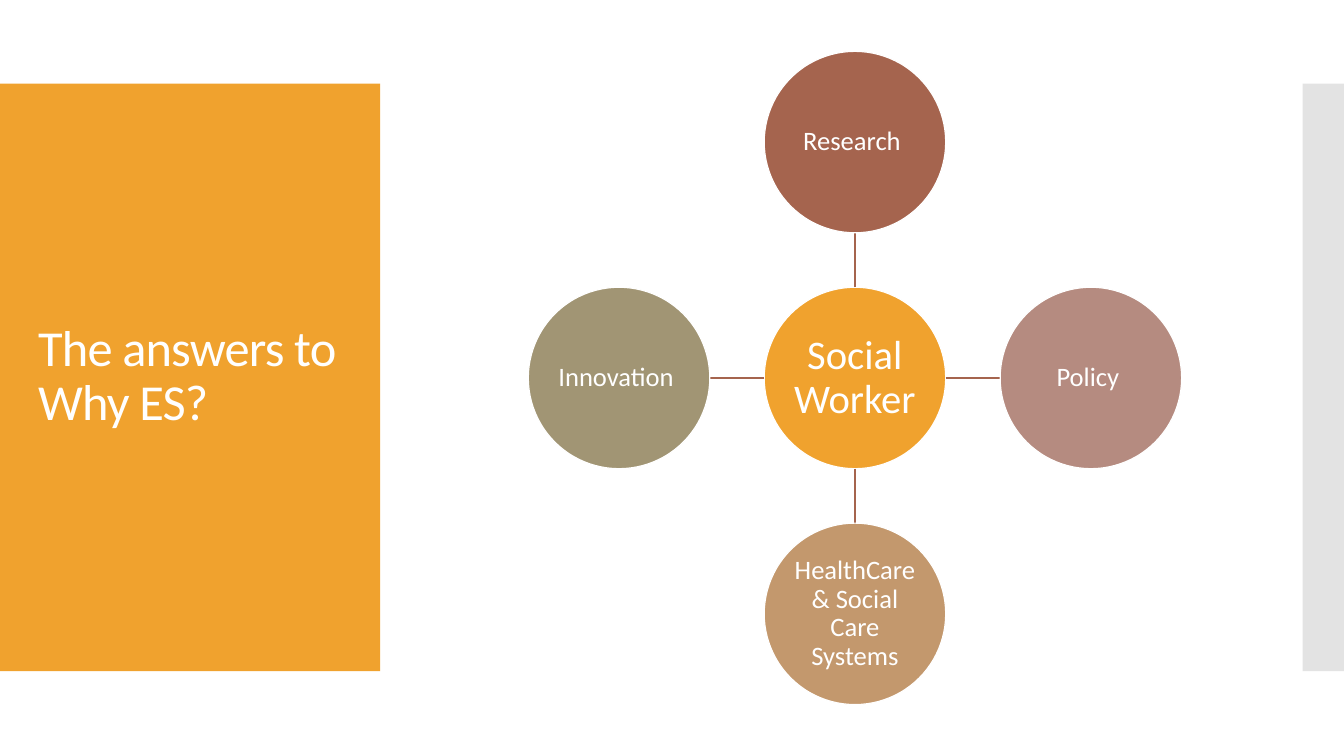
"""Build a slide with a title panel and a hub-and-spoke diagram."""
from dataclasses import dataclass

import pptx
import pptx.dml.color
import pptx.enum.shapes
import pptx.enum.text
import pptx.oxml.ns
import pptx.util
from lxml import etree
from pptx.util import Inches


@dataclass(frozen=True)
class Theme:
    font: str = "Calibri"
    white: str = "FFFFFF"
    accent: str = "F0A22E"
    spoke: str = "A5644E"
    side_bar: str = "C8C8C8"
    title_size: float = 36
    hub_size: float = 29
    node_size: float = 19
    line_width: float = 0.85
    line_spacing: float = 0.9


@dataclass(frozen=True)
class Node:
    text: str
    color: str
    column: int
    row: int


THEME = Theme()
CENTER_X, CENTER_Y = 8.48, 3.75
DIAMETER, STEP = 1.8, 2.34
HUB = Node("Social Worker ", THEME.accent, 0, 0)
NODES = [
    Node("Research ", "A5644E", 0, -1),
    Node("Policy ", "B58B80", 1, 0),
    Node("HealthCare & Social Care Systems", "C3986D", 0, 1),
    Node("Innovation ", "A19574", -1, 0),
]


def rgb(color: str) -> pptx.dml.color.RGBColor:
    return pptx.dml.color.RGBColor.from_string(color)


def write_text(shape, text: str, size: float, inset: float, alignment, spacing: int = 0) -> None:
    frame = shape.text_frame
    frame.text = text
    frame.word_wrap = True
    frame.vertical_anchor = pptx.enum.text.MSO_ANCHOR.MIDDLE
    frame.margin_left = frame.margin_right = Inches(inset)
    frame.margin_top = frame.margin_bottom = Inches(inset)
    paragraph = frame.paragraphs[0]
    paragraph.alignment = alignment
    paragraph.line_spacing = THEME.line_spacing
    run = paragraph.runs[0]
    run.font.name = THEME.font
    run.font.size = pptx.util.Pt(size)
    run.font.color.rgb = rgb(THEME.white)
    if spacing:
        run._r.get_or_add_rPr().set("spc", str(spacing))


def add_filled_shape(slide, kind, left: float, top: float, width: float, height: float, color: str):
    shape = slide.shapes.add_shape(
        kind, Inches(left), Inches(top), Inches(width), Inches(height)
    )
    shape.shadow.inherit = False
    shape.fill.solid()
    shape.fill.fore_color.rgb = rgb(color)
    shape.line.fill.background()
    return shape


def add_panel(slide, left: float, width: float, color: str):
    rectangle = pptx.enum.shapes.MSO_SHAPE.RECTANGLE
    return add_filled_shape(slide, rectangle, left, 0.83, width, 5.83, color)


def set_opacity(shape, percent: int) -> None:
    color = shape._element.spPr.find(".//" + pptx.oxml.ns.qn("a:srgbClr"))
    etree.SubElement(color, pptx.oxml.ns.qn("a:alpha")).set("val", str(percent * 1000))


def add_title(slide, text: str) -> None:
    title = slide.shapes.add_textbox(Inches(0.28), Inches(1.23), Inches(3.22), Inches(5.03))
    write_text(title, text, THEME.title_size, 0.1, pptx.enum.text.PP_ALIGN.LEFT, spacing=-60)


def add_node(slide, node: Node, size: float, inset: float) -> None:
    left = CENTER_X + node.column * STEP - DIAMETER / 2
    top = CENTER_Y + node.row * STEP - DIAMETER / 2
    oval = pptx.enum.shapes.MSO_SHAPE.OVAL
    circle = add_filled_shape(slide, oval, left, top, DIAMETER, DIAMETER, node.color)
    circle.line.color.rgb = rgb(THEME.white)
    circle.line.width = pptx.util.Pt(THEME.line_width)
    write_text(circle, node.text, size, inset, pptx.enum.text.PP_ALIGN.CENTER)


def add_spoke(slide, node: Node) -> None:
    start, end = DIAMETER / 2, STEP - DIAMETER / 2
    connector = slide.shapes.add_connector(
        pptx.enum.shapes.MSO_CONNECTOR.STRAIGHT,
        Inches(CENTER_X + node.column * start),
        Inches(CENTER_Y + node.row * start),
        Inches(CENTER_X + node.column * end),
        Inches(CENTER_Y + node.row * end),
    )
    connector.line.color.rgb = rgb(THEME.spoke)
    connector.line.width = pptx.util.Pt(THEME.line_width)
    etree.SubElement(connector._element.spPr, pptx.oxml.ns.qn("a:effectLst"))


def main() -> None:
    presentation = pptx.Presentation()
    presentation.slide_width = Inches(13.33)
    presentation.slide_height = Inches(7.5)
    slide = presentation.slides.add_slide(presentation.slide_layouts[6])

    add_panel(slide, 0, 3.77, THEME.accent)
    side_bar = add_panel(slide, 12.92, 0.41, THEME.side_bar)
    set_opacity(side_bar, 50)
    add_title(slide, "The answers to Why ES?")

    add_node(slide, HUB, THEME.hub_size, 0.02)
    for node in NODES:
        add_spoke(slide, node)
        add_node(slide, node, THEME.node_size, 0.01)

    presentation.save("out.pptx")


if __name__ == "__main__":
    main()
